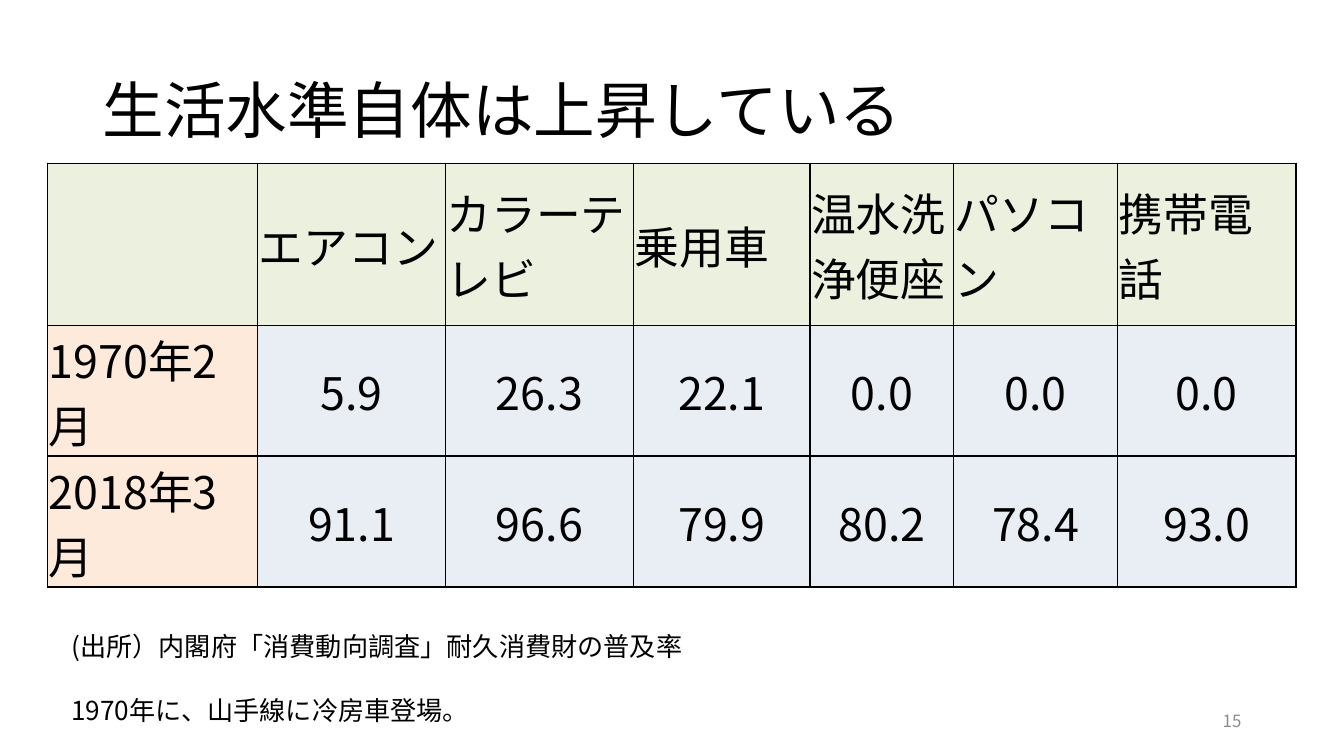
from dataclasses import dataclass

from lxml import etree
from pptx import Presentation
from pptx import util as u
from pptx.dml.color import RGBColor
from pptx.enum import text
from pptx.oxml import ns

FONT = "Noto Sans CJK JP"
COLORS = {
    "ink": "000000",
    "page": "8C8C8C",
    "header": "EBF1DE",
    "period": "FDEADA",
    "value": "E9EDF4",
}
LEFT, CENTER, RIGHT = text.PP_ALIGN.LEFT, text.PP_ALIGN.CENTER, text.PP_ALIGN.RIGHT

# Ownership rates of durable goods, in percent
RATES = [
    ["", "エアコン", "カラーテレビ", "乗用車", "温水洗浄便座", "パソコン", "携帯電話"],
    ["1970年2月", "5.9", "26.3", "22.1", "0.0", "0.0", "0.0"],
    ["2018年3月", "91.1", "96.6", "79.9", "80.2", "78.4", "93.0"],
]
COLUMN_WIDTHS = [3.97, 3.55, 3.55, 3.34, 2.71, 3.1, 3.37]
# Period rows hold two lines of 24 pt text
ROW_HEIGHTS = [3.06, 2.47, 2.47]


@dataclass
class Label:
    """A text box; lengths in centimetres, size in points."""
    words: str
    left: float
    top: float
    width: float
    height: float
    size: float
    color: str = "ink"
    align: text.PP_ALIGN = LEFT
    middle: bool = False
    line_spacing: float = 1.0


LABELS = [
    Label("生活水準自体は上昇している", 1.75, 0.76, 21.9, 2.77, 33,
          middle=True, line_spacing=0.9),
    Label("15", 17.93, 13.24, 5.72, 0.76, 9, "page", RIGHT, middle=True),
    Label("(出所）内閣府「消費動向調査」耐久消費財の普及率", 1.1, 11.79, 21.41, 0.86, 14),
    Label("1970年に、山手線に冷房車登場。", 1.1, 13, 19.99, 0.86, 14),
]


def style_paragraph(paragraph, size: float, color: str, align) -> None:
    paragraph.alignment = align
    for run in paragraph.runs:
        run.font.size = u.Pt(size)
        run.font.name = FONT
        run.font.color.rgb = RGBColor.from_string(COLORS[color])
        east_asian = etree.SubElement(run.font._element, ns.qn("a:ea"))
        east_asian.set("typeface", FONT)


def draw_label(slide, label: Label) -> None:
    box = slide.shapes.add_textbox(
        u.Cm(label.left), u.Cm(label.top), u.Cm(label.width), u.Cm(label.height))
    frame = box.text_frame
    frame.text = label.words
    frame.word_wrap = True
    if label.middle:
        frame.vertical_anchor = text.MSO_ANCHOR.MIDDLE
        frame.margin_left = frame.margin_right = u.Cm(0.19)
        frame.margin_top = frame.margin_bottom = u.Cm(0.1)
    else:
        frame.auto_size = text.MSO_AUTO_SIZE.SHAPE_TO_FIT_TEXT
    paragraph = frame.paragraphs[0]
    paragraph.line_spacing = label.line_spacing
    style_paragraph(paragraph, label.size, label.color, label.align)


def add_borders(cell) -> None:
    properties = cell._tc.get_or_add_tcPr()
    for side in ("lnL", "lnR", "lnT", "lnB"):
        line = etree.SubElement(properties, ns.qn(f"a:{side}"), w=str(u.Pt(1)))
        fill = etree.SubElement(line, ns.qn("a:solidFill"))
        etree.SubElement(fill, ns.qn("a:srgbClr"), val=COLORS["ink"])


def fill_cell(cell, words: str, color: str) -> None:
    cell.text = words
    cell.vertical_anchor = text.MSO_ANCHOR.MIDDLE
    cell.margin_left = cell.margin_right = cell.margin_top = u.Cm(0.02)
    cell.margin_bottom = 0
    # Borders come before the fill in the cell properties
    add_borders(cell)
    cell.fill.solid()
    cell.fill.fore_color.rgb = RGBColor.from_string(COLORS[color])
    align = CENTER if color == "value" else LEFT
    style_paragraph(cell.text_frame.paragraphs[0], 24, "ink", align)


def draw_rates(slide) -> None:
    rates = slide.shapes.add_table(
        len(ROW_HEIGHTS), len(COLUMN_WIDTHS), u.Cm(0.9), u.Cm(3.09),
        u.Cm(sum(COLUMN_WIDTHS)), u.Cm(sum(ROW_HEIGHTS))).table
    for column, width in zip(rates.columns, COLUMN_WIDTHS):
        column.width = u.Cm(width)
    for row, height in zip(rates.rows, ROW_HEIGHTS):
        row.height = u.Cm(height)
    for r, row_words in enumerate(RATES):
        for c, words in enumerate(row_words):
            color = "header" if r == 0 else "period" if c == 0 else "value"
            fill_cell(rates.cell(r, c), words, color)


def main() -> None:
    deck = Presentation()
    deck.slide_width, deck.slide_height = u.Cm(25.4), u.Cm(14.29)
    slide = deck.slides.add_slide(deck.slide_layouts[6])

    # Title, table, then page number and source notes
    title, *footers = LABELS
    draw_label(slide, title)
    draw_rates(slide)
    for footer in footers:
        draw_label(slide, footer)

    deck.save("out.pptx")


if __name__ == "__main__":
    main()
